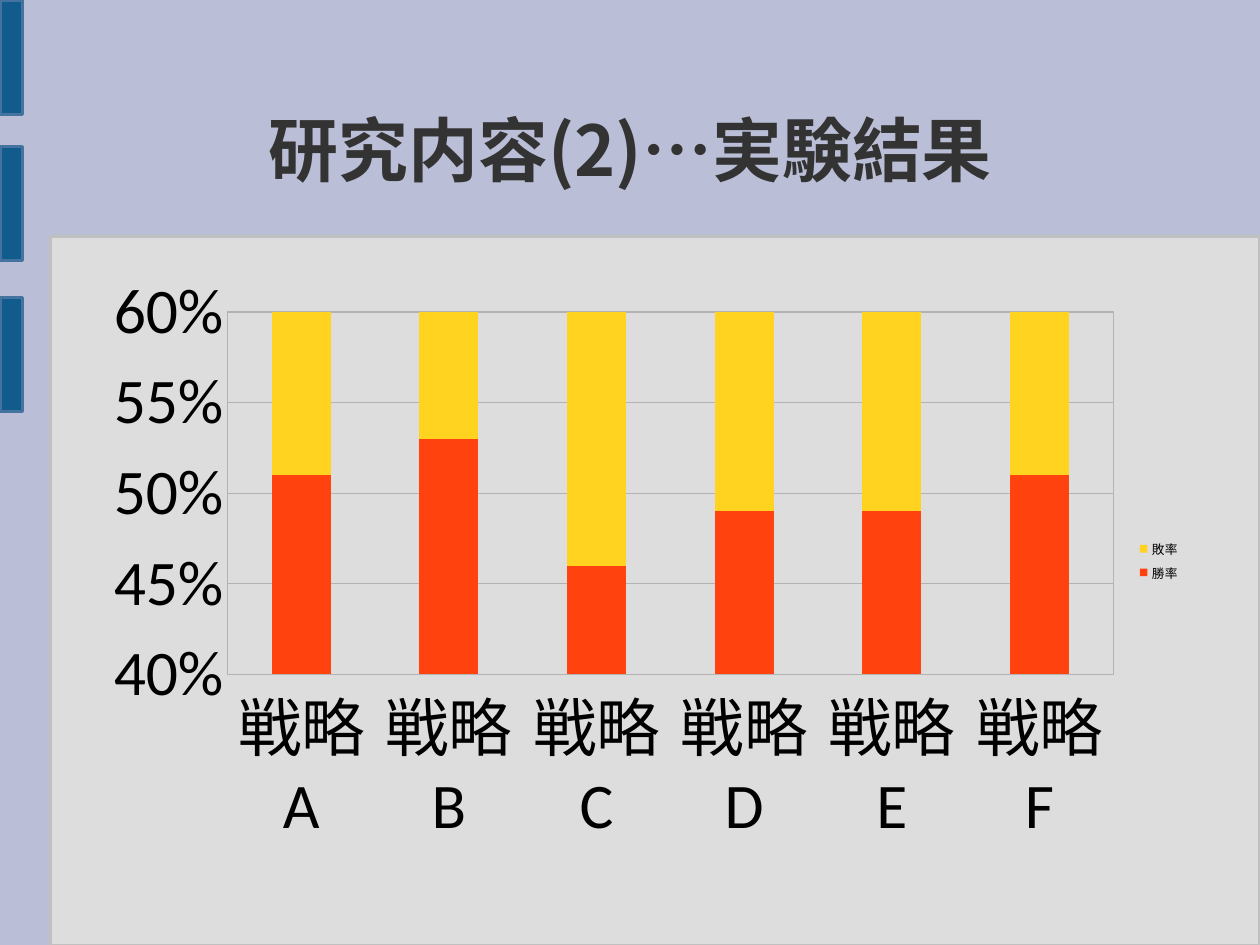
from lxml import etree
from pptx import Presentation
from pptx import util as u
from pptx.chart import data as chart_data
from pptx.dml import color
from pptx.enum import chart as charts, shapes, text
from pptx.oxml import ns, parse_xml

GRID = "B3B3B3"
CM_PER_INCH = 2.54


def rgb(value):
    return color.RGBColor.from_string(value)


def apply(target, values):
    for name, value in values.items():
        setattr(target, name, value)


class Deck:
    latin = "Calibri"
    cjk = "Noto Sans CJK JP"

    def __init__(self, width, height, background):
        self.prs = Presentation()
        apply(self.prs, {"slide_width": u.Inches(width), "slide_height": u.Inches(height)})
        self.slide = self.prs.slides.add_slide(self.prs.slide_layouts[6])
        self.fill(self.slide.background.fill, background)

    def fill(self, target, value):
        target.solid()
        target.fore_color.rgb = rgb(value)

    def line(self, target, value, width):
        self.fill(target.fill, value)
        target.width = u.Pt(width)

    def font(self, target, size, value="000000", **values):
        apply(target, {"name": self.latin, "size": u.Pt(size), **values})
        target.color.rgb = rgb(value)

    def panel(self, box, fill, line):
        panel = self.slide.shapes.add_shape(shapes.MSO_SHAPE.RECTANGLE, *map(u.Inches, box))
        panel.shadow.inherit = False
        self.fill(panel.fill, fill)
        self.line(panel.line, line, 2)

    def title(self, box, words):
        frame = self.slide.shapes.add_textbox(*map(u.Inches, box)).text_frame
        apply(frame, {"word_wrap": True, "vertical_anchor": text.MSO_ANCHOR.MIDDLE,
                      "margin_left": 0, "margin_right": 0, "margin_top": 0, "margin_bottom": 0})
        heading = frame.paragraphs[0]
        heading.alignment = text.PP_ALIGN.CENTER
        run = heading.add_run()
        run.text = words
        self.font(run.font, 44, "333333", name=self.cjk, bold=True)
        etree.SubElement(run.font._element, ns.qn("a:ea"), typeface=self.cjk)

    def stacked_chart(self, box, categories, series, plot_box):
        rates = chart_data.CategoryChartData()
        rates.categories = categories
        for name, values, _ in series:
            rates.add_series(name, values)
        chart = self.slide.shapes.add_chart(
            charts.XL_CHART_TYPE.COLUMN_STACKED_100, *map(u.Inches, box), rates).chart
        apply(chart, {"has_title": False, "has_legend": True})
        self.font(chart.font, 10)
        apply(chart.legend, {"position": charts.XL_LEGEND_POSITION.RIGHT, "include_in_layout": False})
        self.font(chart.legend.font, 8)
        plot = chart.plots[0]
        apply(plot, {"gap_width": 150, "overlap": 100, "vary_by_categories": False})
        for bars, (_, _, fill) in zip(plot.series, series):
            self.fill(bars.format.fill, fill)
        for axis in (chart.category_axis, chart.value_axis):
            apply(axis, {"major_tick_mark": charts.XL_TICK_MARK.NONE,
                         "minor_tick_mark": charts.XL_TICK_MARK.NONE})
            self.font(axis.tick_labels.font, 40)
            self.line(axis.format.line, GRID, 0.75)
        apply(chart.value_axis, {"minimum_scale": 0.4, "maximum_scale": 0.6,
                                 "major_unit": 0.05, "has_major_gridlines": True})
        apply(chart.value_axis.tick_labels, {"number_format": "0%", "number_format_is_linked": False})
        self.line(chart.value_axis.major_gridlines.format.line, GRID, 0.75)
        self.frame_plot(chart, box, plot_box)

    def frame_plot(self, chart, box, plot_box):
        area = chart._chartSpace.chart.plotArea
        for layout in area.findall(ns.qn("c:layout")):
            area.remove(layout)
        left, top, width, height = box
        plot_left, plot_top, plot_width, plot_height = plot_box
        shares = ((plot_left - left) / width, (plot_top - top) / height,
                  plot_width / width, plot_height / height)
        sizes = "".join(f'<c:{key} val="{share}"/>' for key, share in zip("xywh", shares))
        area.insert(0, parse_xml(
            f'<c:layout {ns.nsdecls("c")}><c:manualLayout><c:layoutTarget val="inner"/>'
            f'<c:xMode val="edge"/><c:yMode val="edge"/>{sizes}</c:manualLayout></c:layout>'))
        area.append(parse_xml(
            f'<c:spPr {ns.nsdecls("c", "a")}><a:noFill/><a:ln w="{u.Pt(0.75)}"><a:solidFill>'
            f'<a:srgbClr val="{GRID}"/></a:solidFill></a:ln></c:spPr>'))


def main():
    deck = Deck(28 / CM_PER_INCH, 21 / CM_PER_INCH, "BABED6")
    deck.panel((0.44, 2.07, 10.58, 6.2), "DDDDDD", "C0C0C0")
    for top in (0, 1.28, 2.6):
        deck.panel((0, top, 0.2, 1), "125C8D", "43739E")
    deck.title((0.81, 0.61, 9.41, 1.38), "研究内容(2)…実験結果")
    wins = (51, 53, 46, 49, 49, 51)
    losses = [100 - win for win in wins]
    deck.stacked_chart(
        (0.81, 2.3, 9.62, 5.21),
        [f"戦略{letter}" for letter in "ABCDEF"],
        [("勝率", wins, "FF420E"), ("敗率", losses, "FFD320")],
        (1.99, 2.73, 7.75, 3.17))
    deck.prs.save("out.pptx")


if __name__ == "__main__":
    main()
